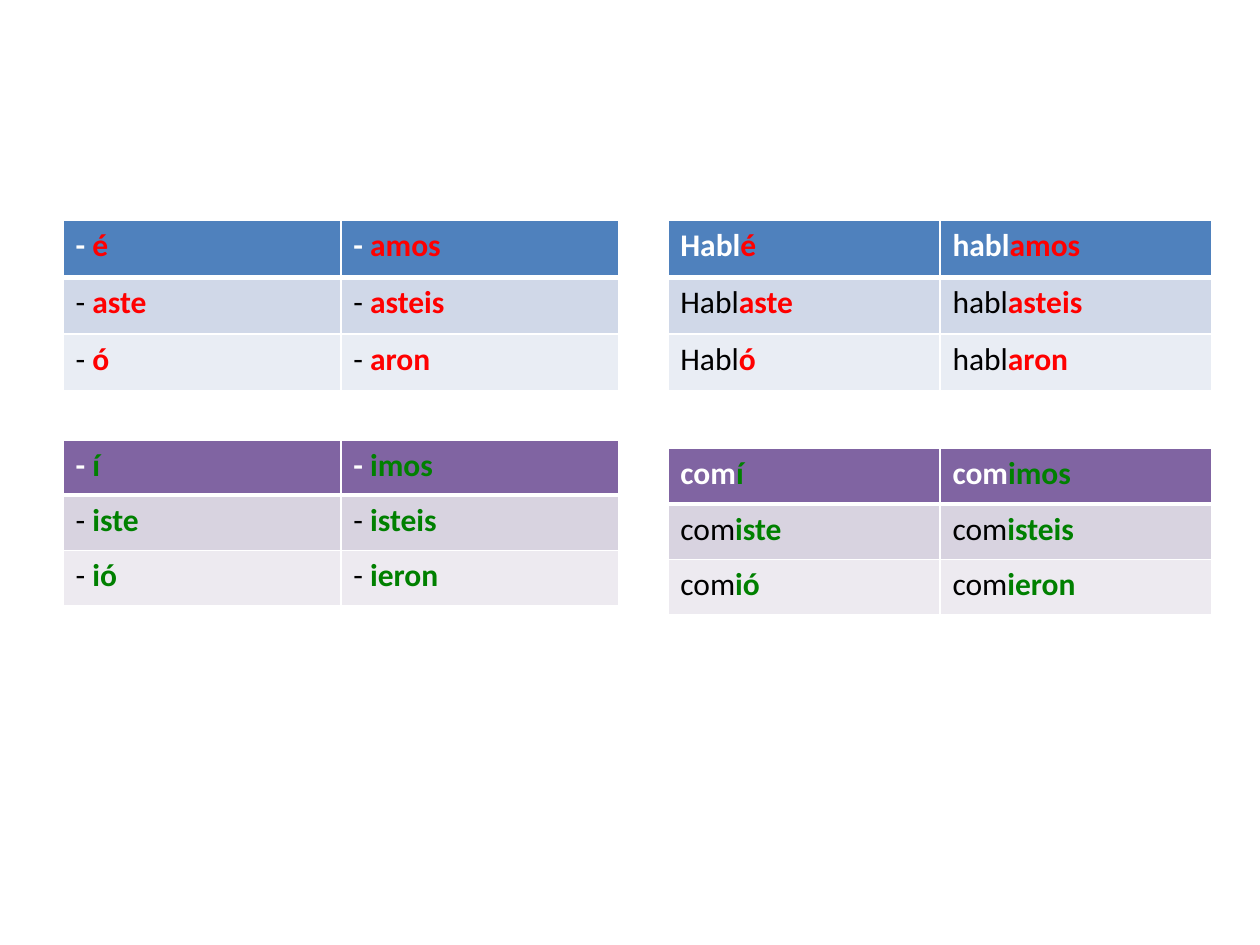
"""Builds a slide of Spanish preterite endings with regular -ar and -er verbs."""
from dataclasses import dataclass

from lxml import etree
from pptx import Presentation
from pptx import util as u
from pptx.dml.color import RGBColor
from pptx.oxml import ns


@dataclass(frozen=True)
class Theme:
    """Row fills, ending colour and ending pairs of one verb group."""
    fills: tuple[str, str, str]
    tint: str
    ends: tuple[tuple[str, str], ...]


@dataclass(frozen=True)
class Grid:
    """Place, row height, column stems and theme of one table."""
    left: float
    top: float
    wide: float
    high: float
    stems: tuple[str, str]
    theme: Theme


AR = Theme(("4F81BD", "D0D8E8", "E9EDF4"), "FF0000",
           (("é", "amos"), ("aste", "asteis"), ("ó", "aron")))
ER = Theme(("8064A2", "D8D3E0", "EDEAF0"), "008000",
           (("í", "imos"), ("iste", "isteis"), ("ió", "ieron")))
GRIDS = (
    Grid(0.5, 1.75, 4.41, 0.45, ("- ", "- "), AR),
    Grid(5.3, 1.75, 4.32, 0.45, ("Habl", "habl"), AR),
    Grid(0.5, 3.49, 4.41, 0.44, ("- ", "- "), ER),
    Grid(5.3, 3.56, 4.32, 0.44, ("com", "com"), ER),
)


def paint(fill, tone: str) -> None:
    """Gives a fill one solid colour."""
    fill.solid()
    fill.fore_color.rgb = RGBColor.from_string(tone)


def write(para, words: str, *, tone: str, bold: bool = True,
          size: float = 18, face: str = "Calibri") -> None:
    """Adds a formatted run to a paragraph."""
    run = para.add_run()
    run.text = words
    run.font.name, run.font.size, run.font.bold = face, u.Pt(size), bold
    paint(run.font.fill, tone)


def edge(cell, side: str, width: float, tone: str = "FFFFFF") -> None:
    """Draws one border of a cell."""
    props = cell._tc.get_or_add_tcPr()
    line = etree.SubElement(props, ns.qn(f"a:ln{side}"), w=str(u.Pt(width)))
    solid = etree.SubElement(line, ns.qn("a:solidFill"))
    etree.SubElement(solid, ns.qn("a:srgbClr"), val=tone)


def draw(slide, grid: Grid) -> None:
    """Adds one table of stems and coloured endings."""
    theme = grid.theme
    rows, cols = len(theme.ends), len(grid.stems)
    table = slide.shapes.add_table(
        rows, cols, u.Inches(grid.left), u.Inches(grid.top),
        u.Inches(grid.wide), u.Inches(grid.high * rows)).table
    for r, (fill, ends) in enumerate(zip(theme.fills, theme.ends)):
        table.rows[r].height = u.Inches(grid.high)
        head = r == 0
        widths = {"L": 1, "R": 1, "T": 3 if r == 1 else 1, "B": 3 if head else 1}
        for c, (stem, end) in enumerate(zip(grid.stems, ends)):
            cell = table.cell(r, c)
            for side, width in widths.items():
                edge(cell, side, width)
            paint(cell.fill, fill)
            para = cell.text_frame.paragraphs[0]
            write(para, stem, tone="FFFFFF" if head else "000000", bold=head)
            write(para, end, tone=theme.tint)


deck = Presentation()
deck.slide_width, deck.slide_height = u.Inches(10), u.Inches(7.5)
page = deck.slides.add_slide(deck.slide_layouts[6])
for grid in GRIDS:
    draw(page, grid)
deck.save("out.pptx")
